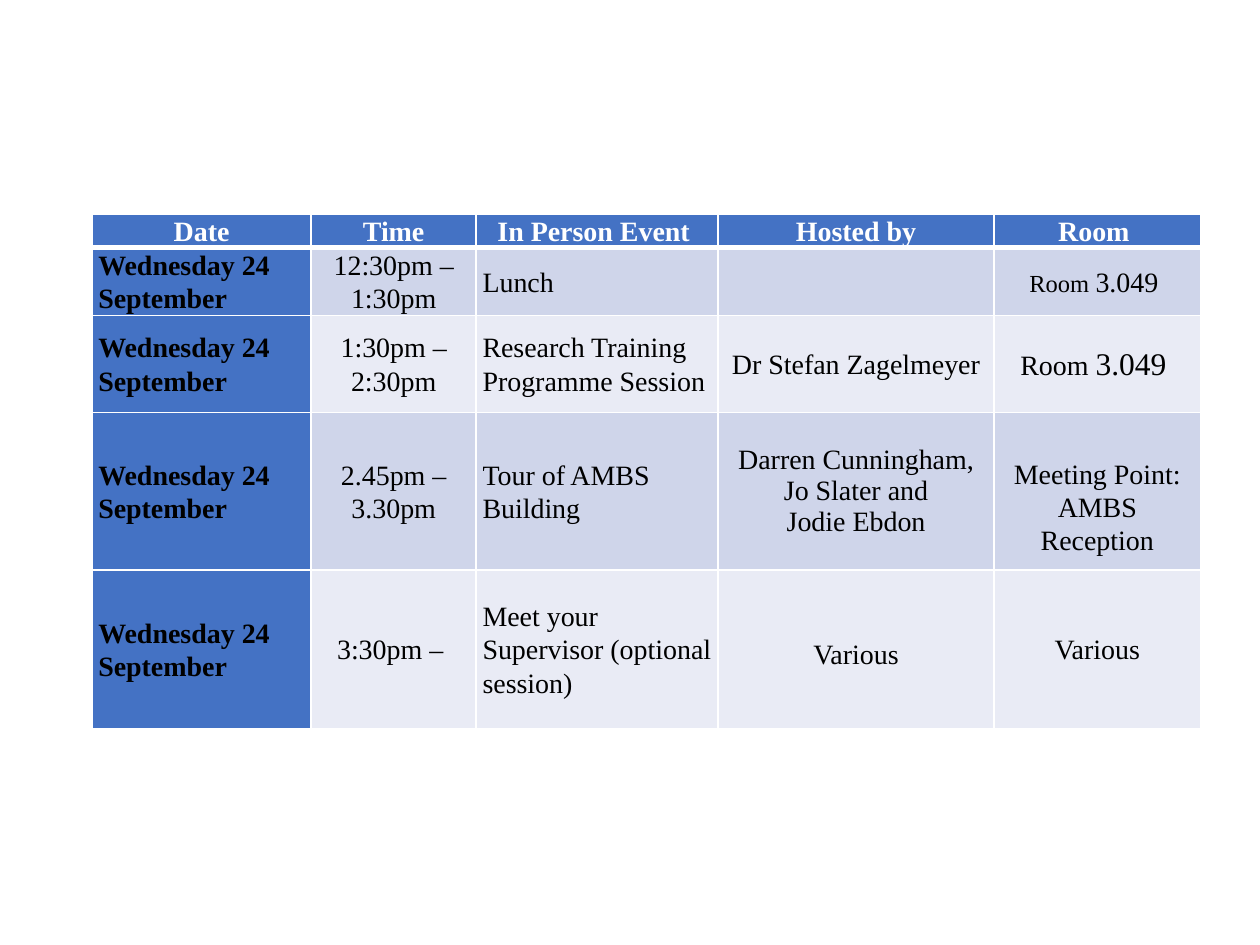
from lxml.etree import SubElement
from pptx import Presentation
from pptx.dml.color import RGBColor
from pptx.enum.text import MSO_ANCHOR, PP_ALIGN
from pptx.oxml.ns import qn
from pptx.util import Inches, Pt

COLORS = {"header": "4472C4", "odd": "CFD5EA", "even": "E9EBF5",
          "white": "FFFFFF", "black": "000000"}
FONT = "Times New Roman"
COLUMN_WIDTHS = [1.74, 1.31, 1.92, 2.19, 1.64]
ROW_HEIGHTS = [0.25, 0.54, 0.77, 1.25, 1.26]
LEFT_ALIGNED = (0, 2)
DAY = "Wednesday 24 September"

# A cell is a list of paragraphs; a paragraph is a list of (text, size) runs.
HEADINGS = [[[(heading, 16)]] for heading in
            ("Date", "Time", "In Person Event ", "Hosted by", "Room ")]
SESSIONS = [
    [[[(DAY, 16)]], [[("12:30pm – 1:30pm", 16)]], [[("Lunch", 16)]],
     [], [[("Room ", 14), ("3.049 ", 16)]]],
    [[[(DAY, 16)]], [[("1:30pm – 2:30pm", 16)]],
     [[("Research Training Programme Session", 16)]],
     [[("Dr Stefan Zagelmeyer", 16)]], [[("Room ", 16), ("3.049 ", 18)]]],
    [[[(DAY, 16)]], [[("2.45pm – 3.30pm", 16)]], [[("Tour of AMBS Building", 16)]],
     [[("Darren Cunningham, Jo Slater and", 16)], [("Jodie Ebdon", 16)]],
     [[("Meeting Point: AMBS Reception", 16)]]],
    [[[(DAY, 16)]], [[("3:30pm – ", 16)]],
     [[("Meet your Supervisor (optional session)", 16)]],
     [[("Various", 16)]], [[("Various", 16)]]],
]
TOP_INSETS = {(3, 4): 0.25, (4, 3): 0.08}
SINGLE_SPACED = (3, 3)


def set_borders(cell, top, bottom):
    """Draw white borders, with the top and bottom widths in points."""
    properties = cell._tc.get_or_add_tcPr()
    widths = {"a:lnL": 1, "a:lnR": 1, "a:lnT": top, "a:lnB": bottom}
    for position, (side, width) in enumerate(widths.items()):
        line = SubElement(properties, qn(side), w=str(Pt(width)))
        SubElement(SubElement(line, qn("a:solidFill")), qn("a:srgbClr"),
                   val=COLORS["white"])
        properties.insert(position, line)


prs = Presentation()
prs.slide_width, prs.slide_height = Inches(10), Inches(7.5)
slide = prs.slides.add_slide(prs.slide_layouts[6])

schedule = slide.shapes.add_table(
    len(ROW_HEIGHTS), len(COLUMN_WIDTHS), Inches(0.73), Inches(1.7),
    Inches(sum(COLUMN_WIDTHS)), Inches(sum(ROW_HEIGHTS))).table
for column, width in zip(schedule.columns, COLUMN_WIDTHS):
    column.width = Inches(width)
for row, height in zip(schedule.rows, ROW_HEIGHTS):
    row.height = Inches(height)

for r, entries in enumerate([HEADINGS] + SESSIONS):
    for c, paragraphs in enumerate(entries):
        cell = schedule.cell(r, c)
        cell.vertical_anchor = MSO_ANCHOR.MIDDLE
        cell.margin_left = cell.margin_right = Inches(0.05)
        cell.margin_top = Inches(TOP_INSETS.get((r, c), 0))
        cell.margin_bottom = 0

        band = "header" if r == 0 or c == 0 else "odd" if r % 2 else "even"
        cell.fill.solid()
        cell.fill.fore_color.rgb = RGBColor.from_string(COLORS[band])
        set_borders(cell, top=3 if r == 1 else 1, bottom=3 if r == 0 else 1)

        for index, runs in enumerate(paragraphs):
            frame = cell.text_frame
            paragraph = frame.add_paragraph() if index else frame.paragraphs[0]
            centred = r == 0 or c not in LEFT_ALIGNED
            paragraph.alignment = PP_ALIGN.CENTER if centred else PP_ALIGN.LEFT
            paragraph.line_spacing = 1.0 if (r, c) == SINGLE_SPACED else 1.07
            for text, size in runs:
                run = paragraph.add_run()
                run.text = text
                run.font.name = FONT
                run.font.size = Pt(size)
                run.font.bold = r == 0 or c == 0
                run.font.color.rgb = RGBColor.from_string(
                    COLORS["black" if r else "white"])

prs.save("out.pptx")
